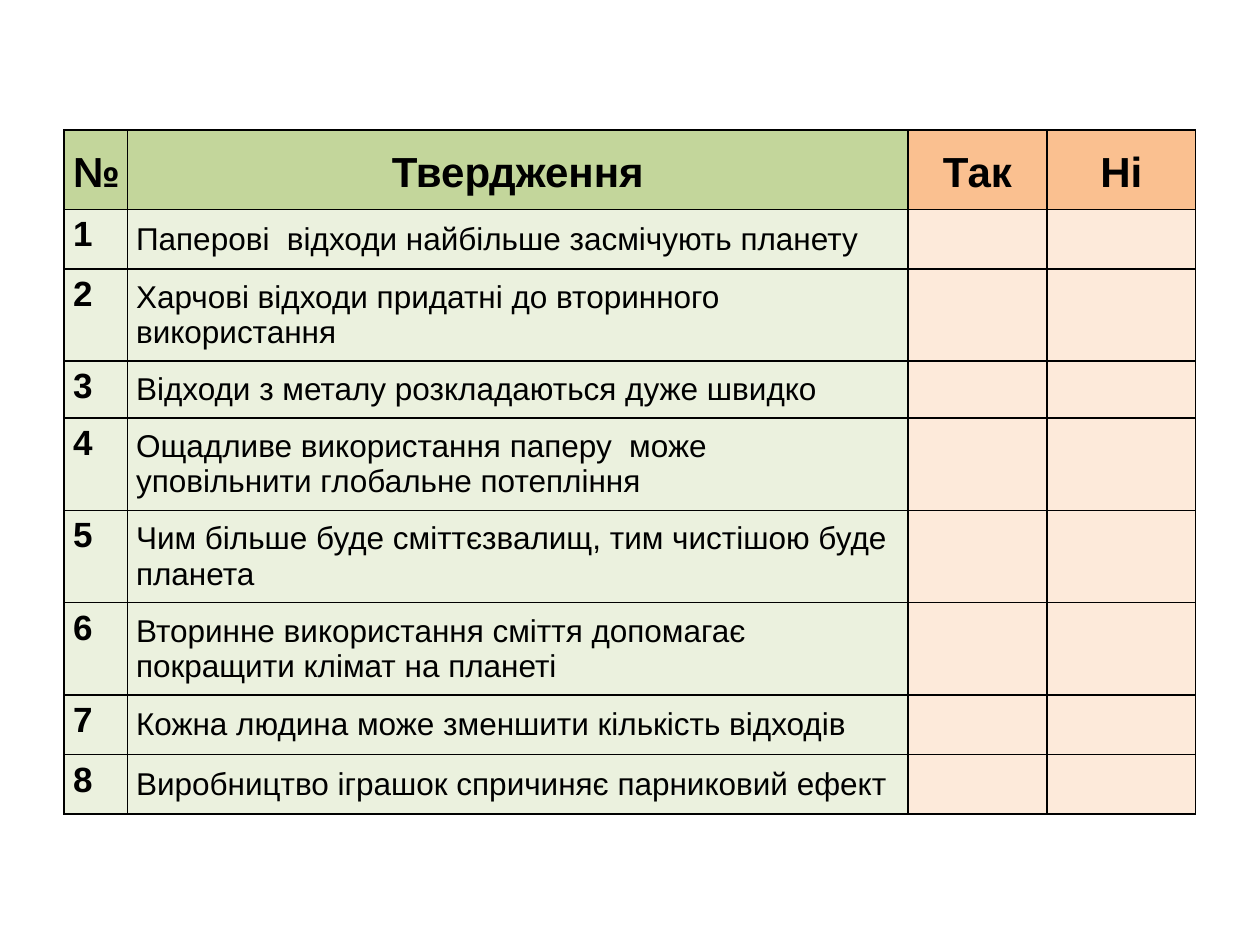
from dataclasses import dataclass

from lxml.etree import SubElement
from pptx import Presentation
from pptx.dml.color import RGBColor
from pptx.enum.text import MSO_ANCHOR as Anchor, PP_ALIGN as Align
from pptx.oxml.ns import qn
from pptx.util import Inches, Pt


@dataclass(frozen=True)
class Theme:
    font: str = "Arial"
    ink: str = "000000"
    statement_head: str = "C3D69B"
    statement_body: str = "EBF1DE"
    answer_head: str = "FAC090"
    answer_body: str = "FDEADA"
    head_size: int = 24
    number_size: int = 20
    body_size: int = 18
    border: int = 1


THEME = Theme()
HEADINGS = ["№", "Твердження", "Так", "Ні"]
STATEMENTS = [
    "Паперові  відходи найбільше засмічують планету",
    "Харчові відходи придатні до вторинного використання",
    "Відходи з металу розкладаються дуже швидко",
    "Ощадливе використання паперу  може  уповільнити глобальне потепління",
    "Чим більше буде сміттєзвалищ, тим чистішою буде планета",
    "Вторинне використання сміття допомагає покращити клімат на планеті",
    "Кожна людина може зменшити кількість відходів",
    "Виробництво іграшок спричиняє парниковий ефект",
]
COLUMN_WIDTHS = [0.5, 6.19, 1.1, 1.18]
ROW_HEIGHTS = [0.63, 0.47, 0.73, 0.45, 0.73, 0.73, 0.73, 0.47, 0.47]


def style_cell(cell, fill):
    """Draw the four borders, then the fill, in the order the schema asks for."""
    properties = cell._tc.get_or_add_tcPr()
    for side in ("lnL", "lnR", "lnT", "lnB"):
        line = SubElement(properties, qn(f"a:{side}"), w=str(Pt(THEME.border)))
        solid = SubElement(line, qn("a:solidFill"))
        SubElement(solid, qn("a:srgbClr"), val=THEME.ink)
    cell.fill.solid()
    cell.fill.fore_color.rgb = RGBColor.from_string(fill)


def write(cell, text, size, bold=False, align=Align.LEFT, anchor=Anchor.MIDDLE, spacing=None):
    cell.margin_left = cell.margin_right = Inches(0.07)
    cell.margin_top = cell.margin_bottom = 0
    cell.vertical_anchor = anchor
    para = cell.text_frame.paragraphs[0]
    para.alignment = align
    para.line_spacing = spacing
    para.space_after = Pt(10)
    span = para.add_run()
    span.text = text
    span.font.name = THEME.font
    span.font.size = Pt(size)
    span.font.bold = bold
    span.font.color.rgb = RGBColor.from_string(THEME.ink)


def add_survey_table(page, left, top, width, height):
    frame = page.shapes.add_table(len(ROW_HEIGHTS), len(COLUMN_WIDTHS), left, top, width, height)
    table = frame.table
    table.horz_banding = False
    table.first_row = False
    for column, size in zip(table.columns, COLUMN_WIDTHS):
        column.width = int(width * size / sum(COLUMN_WIDTHS))
    for row, size in zip(table.rows, ROW_HEIGHTS):
        row.height = int(height * size / sum(ROW_HEIGHTS))

    fills = {
        True: [THEME.statement_head] * 2 + [THEME.answer_head] * 2,
        False: [THEME.statement_body] * 2 + [THEME.answer_body] * 2,
    }
    for index, row in enumerate(table.rows):
        for cell, fill in zip(row.cells, fills[index == 0]):
            style_cell(cell, fill)

    for column, heading in enumerate(HEADINGS):
        write(table.cell(0, column), heading, THEME.head_size, bold=True,
              align=Align.CENTER, spacing=1.15)
    for number, statement in enumerate(STATEMENTS, start=1):
        write(table.cell(number, 0), str(number), THEME.number_size, bold=True,
              anchor=Anchor.TOP, spacing=1.15)
        write(table.cell(number, 1), statement, THEME.body_size)


def main():
    deck = Presentation()
    deck.slide_width, deck.slide_height = Inches(10), Inches(7.5)
    page = deck.slides.add_slide(deck.slide_layouts[6])
    add_survey_table(page, Inches(0.51), Inches(1.03), Inches(8.98), Inches(5.43))
    deck.save("out.pptx")


if __name__ == "__main__":
    main()
